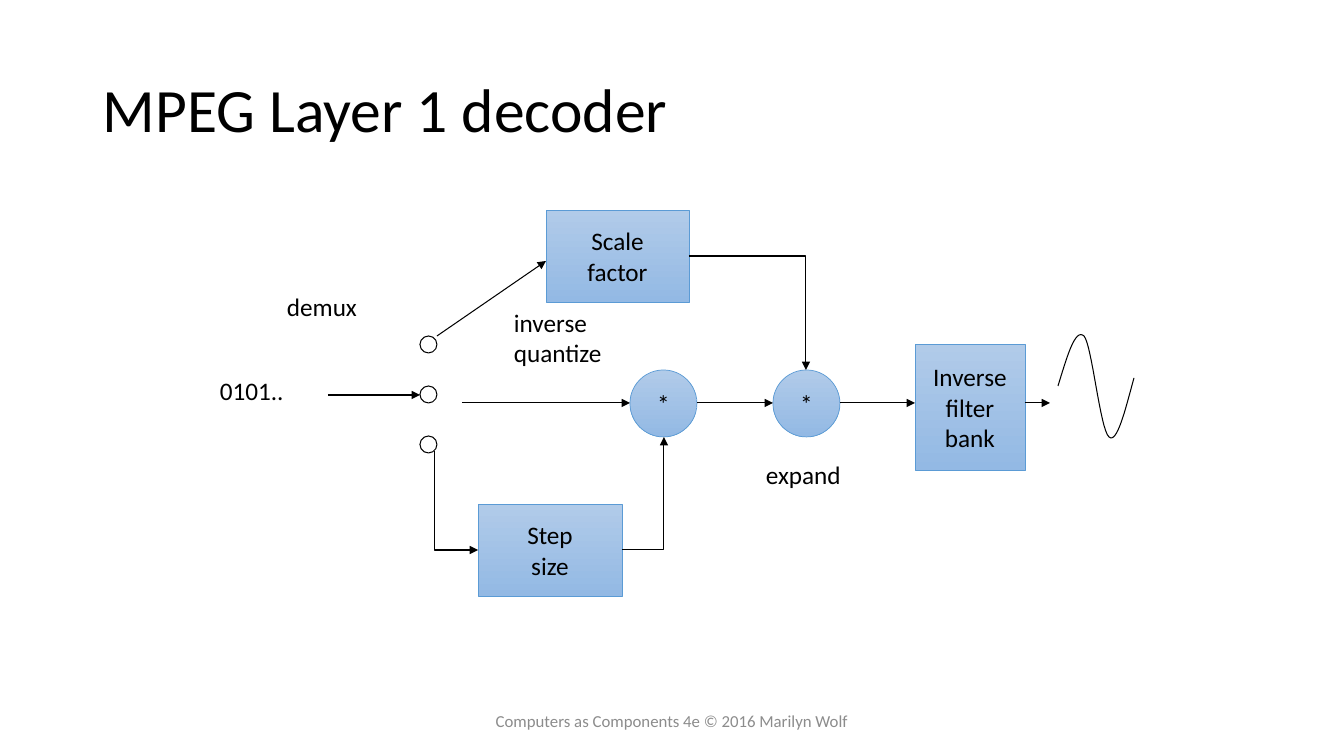
"""Build the MPEG Layer 1 decoder block diagram slide."""
from lxml.etree import SubElement
from pptx import Presentation
from pptx.dml.color import RGBColor as RGB
from pptx.enum.shapes import MSO_CONNECTOR as LINK, MSO_SHAPE as SHAPE
from pptx.enum.text import MSO_ANCHOR as ANCHOR, PP_ALIGN as ALIGN
from pptx.oxml.ns import qn
from pptx.util import Pt

PX = 914400 / 100.8
FONT = "Calibri"
HEX = {"ink": "000000", "top": "B1CBE9", "base": "93B9E4",
       "edge": "5B9BD5", "foot": "8C8C8C"}

TITLE = ("MPEG Layer 1 decoder", (93, 40, 1159, 146))
FOOT = ("Computers as Components 4e © 2016 Marilyn Wolf", (445, 701, 454, 40))
LABELS = [
    ("0101..", (210, 370, 85, 40)),
    ("demux", (277, 286, 91, 40)),
    ("inverse\nquantize", (504, 302, 109, 72)),
    ("expand", (756, 454, 96, 40)),
]
BLOCKS = [
    ("Scale\nfactor", SHAPE.RECTANGLE, (546, 210, 143, 92)),
    ("Step\nsize", SHAPE.RECTANGLE, (478, 504, 144, 92)),
    ("Inverse\nfilter\nbank", SHAPE.RECTANGLE, (915, 344, 110, 126)),
    ("*", SHAPE.OVAL, (630, 370, 67, 67)),
    ("*", SHAPE.OVAL, (773, 370, 67, 67)),
]
PORTS = {"left": 420, "top": 336, "step": 50, "size": 17, "count": 3}
ARROWS = [
    (328, 395, 420, 395),
    (437, 336, 546, 261),
    (462, 403, 630, 403),
    (697, 403, 773, 403),
    (840, 403, 915, 403),
    (1025, 403, 1050, 403),
]
BENDS = [
    ("across", (689, 256, 806, 370)),
    ("across", (622, 550, 664, 437)),
    ("down", (434, 451, 478, 550)),
]
WAVE = [
    ((1058, 386), (1067, 357), (1075, 328), (1084, 336)),
    ((1084, 336), (1092, 345), (1100, 429), (1109, 437)),
    ((1109, 437), (1117, 444), (1125, 411), (1134, 378)),
]
STEPS = 16


def emu(*vals):
    return [round(v * PX) for v in vals]


def tint(name):
    return RGB.from_string(HEX[name])


def write(shape, text, size=18, color="ink", align=ALIGN.LEFT,
          anchor=ANCHOR.TOP, wrap=False, space=None):
    frame = shape.text_frame
    frame.word_wrap = wrap
    frame.vertical_anchor = anchor
    for i, line in enumerate(text.split("\n")):
        para = frame.add_paragraph() if i else frame.paragraphs[0]
        para.alignment = align
        para.line_spacing = space
        run = para.add_run()
        run.text = line
        run.font.name = FONT
        run.font.size = Pt(size)
        run.font.color.rgb = tint(color)


def stroke(shape, color="ink", width=0.75):
    shape.line.color.rgb = tint(color)
    shape.line.width = Pt(width)


def label(slide, text, box, **style):
    write(slide.shapes.add_textbox(*emu(*box)), text, **style)


def block(slide, text, kind, box):
    shape = slide.shapes.add_shape(kind, *emu(*box))
    shape.shadow.inherit = False
    shape.fill.gradient()
    shape.fill.gradient_angle = 270
    for stop, name in zip(shape.fill.gradient_stops, ("top", "base")):
        stop.color.rgb = tint(name)
    stroke(shape, "edge", 0.5)
    write(shape, text, align=ALIGN.CENTER, anchor=ANCHOR.MIDDLE)


def arrow(slide, ends, kind=LINK.STRAIGHT):
    link = slide.shapes.add_connector(kind, *emu(*ends))
    stroke(link)
    SubElement(link.line._get_or_add_ln(), qn("a:tailEnd"), type="triangle")
    SubElement(link._element.spPr, qn("a:effectLst"))
    return link


def bend(slide, way, ends):
    link = arrow(slide, ends, LINK.ELBOW)
    props = link._element.spPr
    props.find(qn("a:prstGeom")).set("prst", "bentConnector2")
    if way == "down":
        x1, y1, x2, y2 = ends
        wide, high = y2 - y1, x2 - x1
        link.left, link.top, link.width, link.height = emu(
            (x1 + x2 - wide) / 2, (y1 + y2 - high) / 2, wide, high)
        frame = props.find(qn("a:xfrm"))
        frame.set("rot", str(270 * 60000))
        frame.set("flipH", "1")


def port(slide, row):
    size = PORTS["size"]
    top = PORTS["top"] + row * PORTS["step"]
    ring = slide.shapes.add_shape(
        SHAPE.OVAL, *emu(PORTS["left"], top, size, size))
    ring.shadow.inherit = False
    ring.fill.background()
    stroke(ring)


def curve(nodes, t):
    u = 1 - t
    parts = (u ** 3, 3 * u * u * t, 3 * u * t * t, t ** 3)
    return emu(*(sum(k * v for k, v in zip(parts, axis))
                 for axis in zip(*nodes)))


def wave(slide):
    pen = slide.shapes.build_freeform(*emu(*WAVE[0][0]))
    pen.add_line_segments(
        [curve(arc, i / STEPS) for arc in WAVE for i in range(1, STEPS + 1)],
        close=False)
    shape = pen.convert_to_shape()
    shape.shadow.inherit = False
    shape.fill.background()
    stroke(shape)


def main():
    deck = Presentation()
    deck.slide_width, deck.slide_height = emu(1344, 756)
    slide = deck.slides.add_slide(deck.slide_layouts[6])
    label(slide, *TITLE, size=44, anchor=ANCHOR.MIDDLE, wrap=True, space=0.9)
    for row in range(PORTS["count"]):
        port(slide, row)
    for item in LABELS:
        label(slide, *item)
    for item in BLOCKS:
        block(slide, *item)
    for ends in ARROWS:
        arrow(slide, ends)
    for item in BENDS:
        bend(slide, *item)
    wave(slide)
    label(slide, *FOOT, size=12, color="foot", align=ALIGN.CENTER,
          anchor=ANCHOR.MIDDLE, wrap=True)
    deck.save("out.pptx")


if __name__ == "__main__":
    main()
